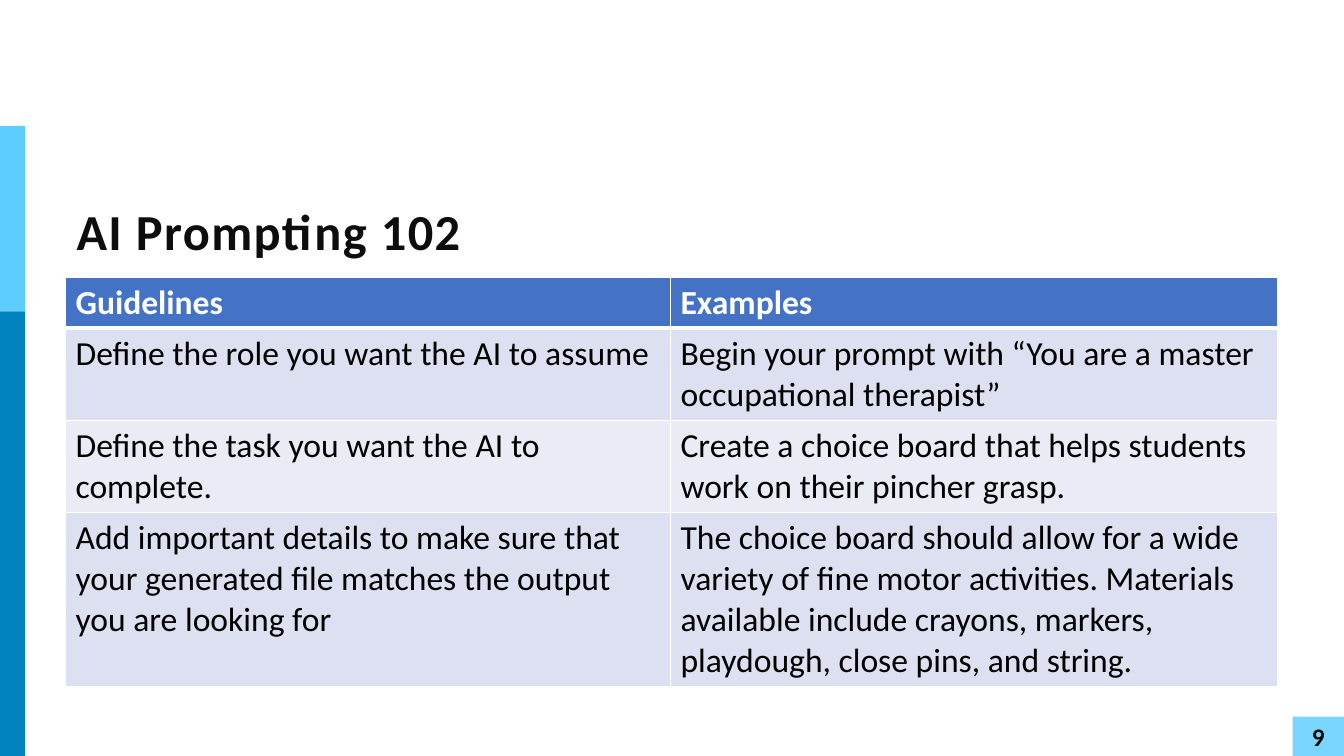
from dataclasses import dataclass

from lxml import etree
from pptx import Presentation
from pptx.dml.color import RGBColor
from pptx.enum.shapes import MSO_SHAPE
from pptx.enum.text import MSO_ANCHOR, PP_ALIGN
from pptx.oxml.ns import qn
from pptx.util import Inches, Pt

RECTANGLE = MSO_SHAPE.RECTANGLE
MIDDLE = MSO_ANCHOR.MIDDLE
LEFT, CENTER = PP_ALIGN.LEFT, PP_ALIGN.CENTER

COLORS = {
    "sky": "5DCDFF",
    "ocean": "0083BF",
    "badge": "79D6FF",
    "header": "4472C4",
    "odd_row": "DCE0F0",
    "even_row": "E9EBF5",
    "title": "0D0D0D",
    "black": "000000",
    "white": "FFFFFF",
}
FONT = "Calibri"
TITLE_ONLY = 5
COLUMN_WIDTHS = (6, 6.02)
ROW_HEIGHTS = (0.46, 0.83, 0.83, 1.57)
THIN, THICK = 1, 3


@dataclass(frozen=True)
class Block:
    left: float
    top: float
    width: float
    height: float
    color: str
    label: str = ""


@dataclass(frozen=True)
class Advice:
    guideline: str
    example: str


BLOCKS = (
    Block(0, 1.25, 0.25, 1.84, "sky"),
    Block(0, 3.09, 0.25, 4.41, "ocean"),
    Block(12.82, 7.11, 0.51, 0.4, "badge", "9"),
)
ADVICE = (
    Advice("Guidelines", "Examples"),
    Advice(
        "Define the role you want the AI to assume",
        "Begin your prompt with “You are a master occupational therapist”",
    ),
    Advice(
        "Define the task you want the AI to complete.",
        "Create a choice board that helps students work on their pincher grasp.",
    ),
    Advice(
        "Add important details to make sure that your generated file matches "
        "the output you are looking for",
        "The choice board should allow for a wide variety of fine motor activities. "
        "Materials available include crayons, markers, playdough, close pins, "
        "and string.",
    ),
)


def rgb(color: str) -> RGBColor:
    return RGBColor.from_string(COLORS[color])


def write(frame, text: str, size: float, color: str, bold: bool, align=LEFT):
    """Put one formatted run in the frame and return it."""
    paragraph = frame.paragraphs[0]
    paragraph.alignment = align
    run = paragraph.add_run()
    run.text = text
    for attribute, value in {"name": FONT, "size": Pt(size), "bold": bold}.items():
        setattr(run.font, attribute, value)
    run.font.color.rgb = rgb(color)
    return run


def add_block(slide, block: Block) -> None:
    lengths = (block.left, block.top, block.width, block.height)
    rectangle = slide.shapes.add_shape(RECTANGLE, *map(Inches, lengths))
    rectangle.shadow.inherit = False
    rectangle.fill.solid()
    rectangle.fill.fore_color.rgb = rgb(block.color)
    rectangle.line.fill.background()
    if block.label:
        rectangle.text_frame.vertical_anchor = MIDDLE
        write(rectangle.text_frame, block.label, 18, "black", True, CENTER)


def add_title(slide, text: str) -> None:
    title = slide.shapes.title
    position = {"left": 0.66, "top": 1.98, "width": 12.03, "height": 0.72}
    for attribute, value in position.items():
        setattr(title, attribute, Inches(value))
    title.text_frame.vertical_anchor = MIDDLE
    title.text_frame.word_wrap = True
    run = write(title.text_frame, text, 36, "title", True)
    run.font._element.set("spc", "100")
    title.text_frame.paragraphs[0].line_spacing = 0.8


def set_borders(cell, top: float, bottom: float) -> None:
    """Draw white borders; call before the cell gets its fill."""
    properties = cell._tc.get_or_add_tcPr()
    widths = {"a:lnL": THIN, "a:lnR": THIN, "a:lnT": top, "a:lnB": bottom}
    for tag, width in widths.items():
        border = etree.SubElement(properties, qn(tag), w=str(Pt(width)))
        fill = etree.SubElement(border, qn("a:solidFill"))
        etree.SubElement(fill, qn("a:srgbClr"), val=COLORS["white"])


def add_advice_table(slide) -> None:
    table = slide.shapes.add_table(
        len(ADVICE), len(COLUMN_WIDTHS), Inches(0.65), Inches(2.75),
        Inches(sum(COLUMN_WIDTHS)), Inches(sum(ROW_HEIGHTS)),
    ).table
    for column, width in zip(table.columns, COLUMN_WIDTHS):
        column.width = Inches(width)
    for index, (advice, height) in enumerate(zip(ADVICE, ROW_HEIGHTS)):
        table.rows[index].height = Inches(height)
        is_header = index == 0
        band = "header" if is_header else "odd_row" if index % 2 else "even_row"
        for column, text in enumerate((advice.guideline, advice.example)):
            cell = table.cell(index, column)
            set_borders(
                cell,
                top=THICK if index == 1 else THIN,
                bottom=THICK if is_header else THIN,
            )
            cell.fill.solid()
            cell.fill.fore_color.rgb = rgb(band)
            color = "white" if is_header else "black"
            write(cell.text_frame, text, 24, color, is_header)


def main() -> None:
    presentation = Presentation()
    presentation.slide_width = Inches(13.33)
    presentation.slide_height = Inches(7.5)
    slide = presentation.slides.add_slide(presentation.slide_layouts[TITLE_ONLY])
    for block in BLOCKS:
        add_block(slide, block)
    add_title(slide, "AI Prompting 102")
    add_advice_table(slide)
    presentation.save("out.pptx")


if __name__ == "__main__":
    main()
